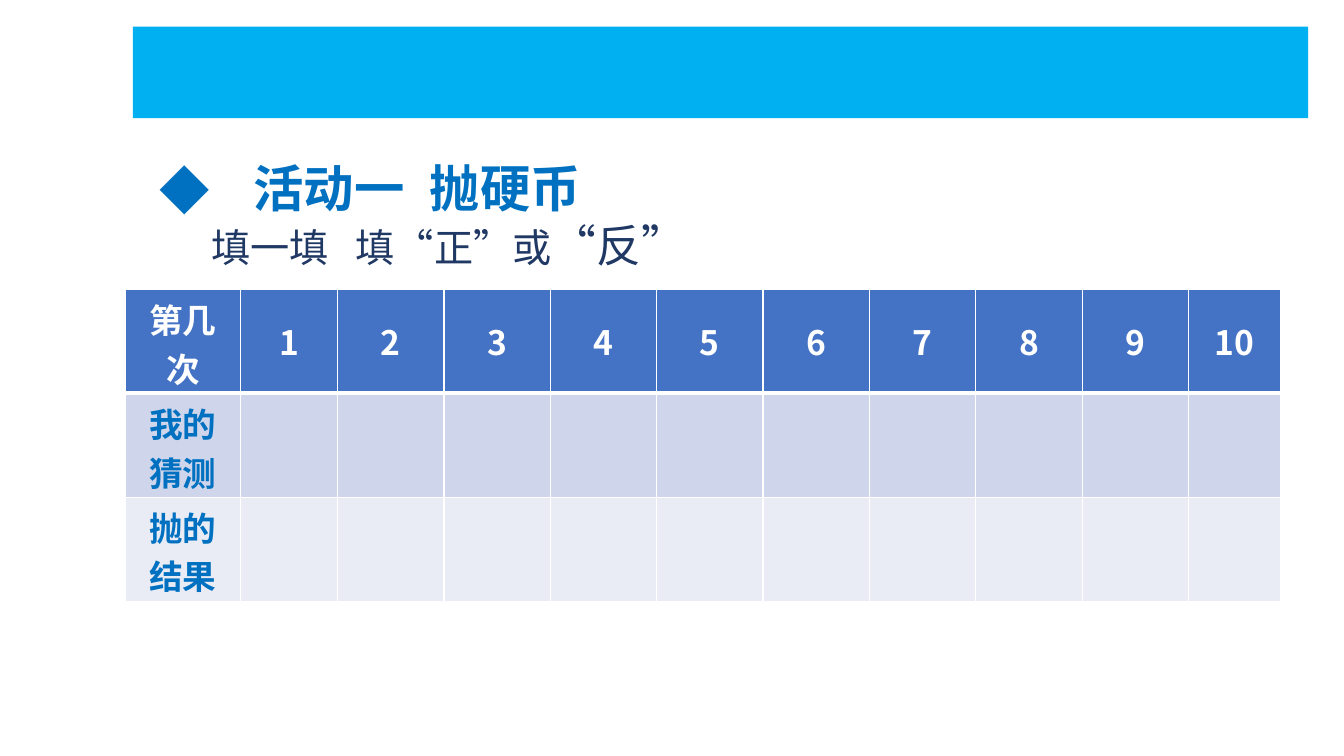
"""Build the coin tossing activity slide with its recording table."""

from dataclasses import dataclass

from lxml.etree import SubElement
from pptx import Presentation
from pptx.dml.color import RGBColor
from pptx.enum.shapes import MSO_SHAPE
from pptx.enum.text import MSO_ANCHOR, PP_ALIGN
from pptx.oxml.ns import qn
from pptx.util import Cm, Pt

COLORS = {
    "banner": "00B0F0",
    "accent": "0070C0",
    "navy": "203864",
    "white": "FFFFFF",
    "header": "4472C4",
    "band_dark": "CFD5EA",
    "band_light": "E9EBF5",
}
CJK_FONT = "Noto Sans CJK SC"
TITLE_FONT = "Roboto"
COLUMN_WIDTHS = [2.92, 2.44] + [2.68] * 8 + [2.31]
ROW_HEIGHT = 2.62


@dataclass
class Span:
    text: str
    size: float
    spacing: float = 0


@dataclass
class TextLine:
    left: float
    top: float
    width: float
    height: float
    spans: list[Span]
    font: str
    color: str
    bold: bool = False
    bullet: str = ""
    indent: float = 0
    line_height: float = 0


@dataclass
class TableRow:
    texts: list[str]
    fill: str
    color: str
    top_border: float
    bottom_border: float


TEXT_LINES = [
    TextLine(3.76, 2.18, 11.76, 2.97,
             [Span("活动一", 36), Span(" ", 36, 9), Span("抛硬币", 36)],
             TITLE_FONT, "accent", True, "◆", 2.38, 90),
    TextLine(5.08, 5.36, 13, 1.63,
             [Span("填一填", 28), Span(" ", 28, 13), Span("填“正”或", 28), Span("“反”", 32)],
             CJK_FONT, "navy"),
]
TABLE_ROWS = [
    TableRow(["第几次"] + [str(number) for number in range(1, 11)], "header", "white", 1, 3),
    TableRow(["我的猜测"] + [""] * 10, "band_dark", "accent", 3, 1),
    TableRow(["抛的结果"] + [""] * 10, "band_light", "accent", 1, 1),
]


def color_of(name: str) -> RGBColor:
    """Return the named colour."""
    return RGBColor.from_string(COLORS[name])


def style_run(run, font: str, size: float, color: str, bold: bool) -> None:
    """Set the Latin and East Asian font, size, weight and colour of a run."""
    run.font.size = Pt(size)
    run.font.bold = bold
    run.font.color.rgb = color_of(color)
    run.font.name = font
    SubElement(run.font._element, qn("a:ea"), typeface=font)


def add_banner(page) -> None:
    """Draw the plain bar at the top."""
    banner = page.shapes.add_shape(MSO_SHAPE.RECTANGLE, Cm(3.35), Cm(0.67), Cm(29.62), Cm(2.31))
    banner.shadow.inherit = False
    banner.fill.solid()
    banner.fill.fore_color.rgb = color_of("banner")
    banner.line.fill.background()


def add_text_line(page, line: TextLine) -> None:
    """Draw one line of text, with a bullet where it has one."""
    box = page.shapes.add_textbox(Cm(line.left), Cm(line.top), Cm(line.width), Cm(line.height))
    box.text_frame.word_wrap = True
    para = box.text_frame.paragraphs[0]
    if line.line_height:
        para.line_spacing = Pt(line.line_height)
    if line.bullet:
        properties = para._p.get_or_add_pPr()
        properties.set("marL", str(Cm(line.indent)))
        properties.set("indent", str(-Cm(line.indent)))
        SubElement(properties, qn("a:buFont"), typeface=CJK_FONT)
        SubElement(properties, qn("a:buChar"), char=line.bullet)
    for span in line.spans:
        run = para.add_run()
        run.text = span.text
        style_run(run, line.font, span.size, line.color, line.bold)
        if span.spacing:
            run.font._element.set("spc", str(int(span.spacing * 100)))


def set_borders(cell, top: float, bottom: float) -> None:
    """Give a cell white borders of the given widths in points."""
    properties = cell._tc.get_or_add_tcPr()
    widths = {"a:lnL": 1, "a:lnR": 1, "a:lnT": top, "a:lnB": bottom}
    for position, (tag, width) in enumerate(widths.items()):
        border = SubElement(properties, qn(tag), w=str(Pt(width)))
        fill = SubElement(border, qn("a:solidFill"))
        SubElement(fill, qn("a:srgbClr"), val=COLORS["white"])
        properties.insert(position, border)


def fill_cell(cell, text: str, row: TableRow) -> None:
    """Write and format one table cell."""
    cell.fill.solid()
    cell.fill.fore_color.rgb = color_of(row.fill)
    cell.vertical_anchor = MSO_ANCHOR.MIDDLE
    set_borders(cell, row.top_border, row.bottom_border)
    cell.text_frame.text = text
    para = cell.text_frame.paragraphs[0]
    para.alignment = PP_ALIGN.CENTER
    for run in para.runs:
        style_run(run, CJK_FONT, 24, row.color, True)


def add_record_table(page) -> None:
    """Draw the table of guesses and results."""
    frame = page.shapes.add_table(
        len(TABLE_ROWS), len(COLUMN_WIDTHS), Cm(3.15), Cm(7.29),
        Cm(sum(COLUMN_WIDTHS)), Cm(ROW_HEIGHT * len(TABLE_ROWS)))
    table = frame.table
    for column, width in zip(table.columns, COLUMN_WIDTHS):
        column.width = Cm(width)
    for table_row, row in zip(table.rows, TABLE_ROWS):
        table_row.height = Cm(ROW_HEIGHT)
        for cell, text in zip(table_row.cells, row.texts):
            fill_cell(cell, text, row)


def main() -> None:
    """Build and save the deck."""
    deck = Presentation()
    deck.slide_width, deck.slide_height = Cm(33.87), Cm(19.05)
    page = deck.slides.add_slide(deck.slide_layouts[6])
    add_banner(page)
    for line in TEXT_LINES:
        add_text_line(page, line)
    add_record_table(page)
    deck.save("out.pptx")


if __name__ == "__main__":
    main()
